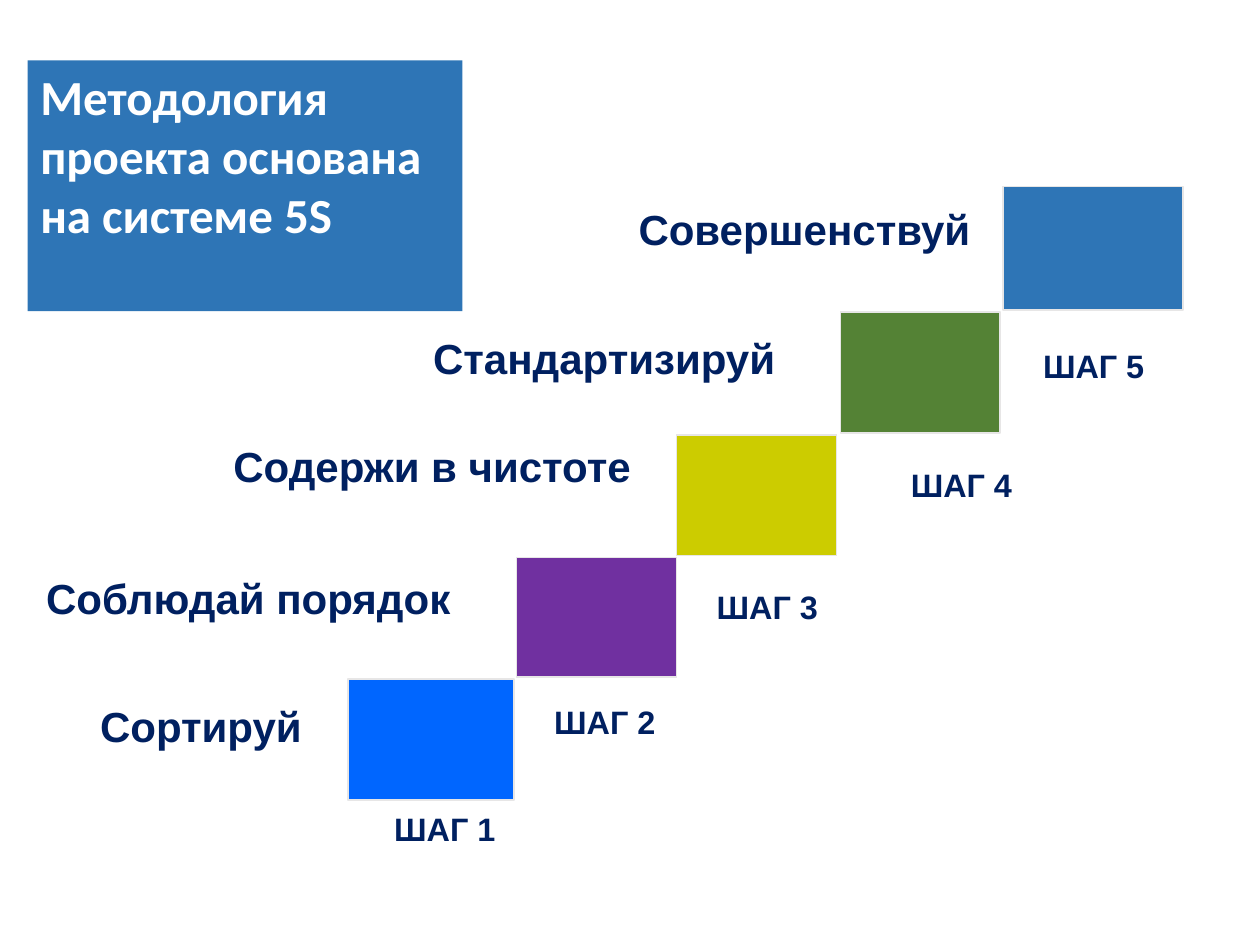
"""Build the 5S staircase slide: five coloured steps with their names and numbers."""
from pptx import Presentation
from pptx.dml.color import RGBColor as Rgb
from pptx.enum.shapes import MSO_SHAPE as Kind
from pptx.enum.text import MSO_ANCHOR as Anchor, MSO_AUTO_SIZE as Fit, PP_ALIGN as Align
from pptx.util import Inches, Pt

THEME = {
    "title": ("Calibri", 28, "FFFFFF"),
    "name": ("Arial", 24, "002060"),
    "step": ("Arial", 18.5, "002060"),
    "panel": "2E75B6",
    "edge": "E7E6E6",
}

deck = Presentation()
deck.slide_width, deck.slide_height = Inches(10), Inches(7.5)
COL, ROW = deck.slide_width / 100, deck.slide_height / 75
slide = deck.slides.add_slide(deck.slide_layouts[5])


def grid(x, y, w, h):
    return [round(n) for n in (x * COL, y * ROW, w * COL, h * ROW)]


def write(para, text, style, align, space):
    face, size, color = THEME[style]
    para.alignment, para.line_spacing = align, space
    para.space_before = Pt(0)
    run = para.add_run()
    run.text = text
    run.font.name, run.font.size, run.font.bold = face, Pt(size), True
    run.font.color.rgb = Rgb.from_string(color)


STEPS = [
    ("0066FF", (27.6, 13.2, 9.6), "Сортируй", (5.1, 56, 21.7, 4), 0.8, (24, 64.4, 22.6)),
    ("7030A0", (41, 12.7, 9.5), "Соблюдай порядок", (2.2, 46.1, 35, 3.6), 0.7, (36.7, 55.9, 22.6)),
    ("CCCC00", (53.7, 12.7, 9.6), "Содержи в чистоте", (17.5, 34.6, 33.6, 4.8), 1.0, (49.6, 46.8, 22.6)),
    ("548235", (66.7, 12.7, 9.6), "Стандартизируй", (32.7, 26.8, 30.5, 4), 0.8, (68.2, 37.1, 16.2)),
    ("2E75B6", (79.6, 14.3, 9.8), "Совершенствуй", (48, 16.5, 31.7, 4), 0.8, (75.5, 27.7, 22.6)),
]
BASE, GAP, TALL = 63.5, 0.15, 3.3

floor = BASE
for num, (color, (left, wide, high), name, area, space, (x, y, w)) in enumerate(STEPS, 1):
    block = slide.shapes.add_shape(Kind.RECTANGLE, *grid(left, floor - high, wide, high))
    block.shadow.inherit = False
    block.fill.solid()
    block.fill.fore_color.rgb = Rgb.from_string(color)
    block.line.color.rgb = Rgb.from_string(THEME["edge"])
    block.line.width = Pt(1)
    floor -= high + GAP

    labels = [(name, area, "name", space), (f"ШАГ {num}", (x, y, w, TALL), "step", 0.8)]
    for text, spot, style, pitch in labels:
        frame = slide.shapes.add_textbox(*grid(*spot)).text_frame
        frame.word_wrap, frame.auto_size = True, Fit.SHAPE_TO_FIT_TEXT
        frame.margin_left = frame.margin_right = Inches(0.08)
        frame.margin_top = frame.margin_bottom = Inches(0.04)
        write(frame.paragraphs[0], text, style, Align.CENTER, pitch)

title = slide.shapes.title
title.left, title.top, title.width, title.height = grid(2.2, 4.8, 34.5, 19.9)
title.fill.solid()
title.fill.fore_color.rgb = Rgb.from_string(THEME["panel"])
frame = title.text_frame
frame.word_wrap, frame.auto_size = True, Fit.NONE
frame.vertical_anchor = Anchor.TOP
for row, text in enumerate(["Методология проекта основана", "на системе 5S"]):
    para = frame.add_paragraph() if row else frame.paragraphs[0]
    write(para, text, "title", Align.LEFT, 1.0)

deck.save("out.pptx")
